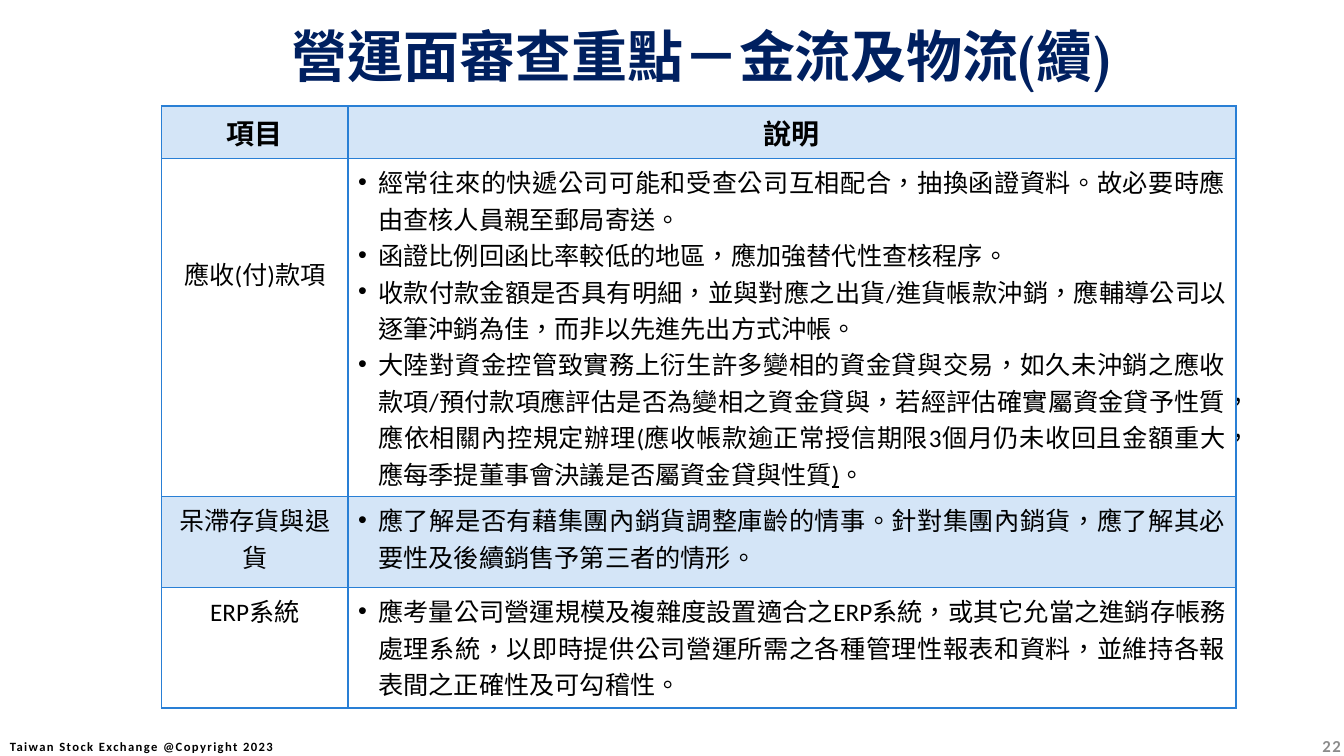
from lxml.etree import SubElement
from pptx import Presentation
from pptx.dml.color import RGBColor
from pptx.enum.lang import MSO_LANGUAGE_ID
from pptx.enum.text import MSO_ANCHOR, PP_ALIGN
from pptx.oxml.ns import qn
from pptx.util import Cm, Pt

COLORS = {"title": "002060", "text": "000000", "number": "8C8C8C",
          "border": "297FD5", "band": "D4E5F7"}
LATIN_FONT = "Calibri"
TITLE_FONT = "Vollkorn"
CHINESE_FONT = "Noto Sans CJK SC"

HEADINGS = ("項目", "說明")
REVIEW_ITEMS = [
    ("應收(付)款項", [
        ["經常往來的快遞公司可能和受查公司互相配合，抽換函證資料。故必要時應由查核人員親至郵局寄送。"],
        ["函證比例回函比率較低的地區，應加強替代性查核程序。"],
        ["收款付款金額是否具有明細，並與對應之出貨/進貨帳款沖銷，應輔導公司以逐筆沖銷為佳，而非以先進先出方式沖帳。"],
        ["大陸對資金控管致實務上衍生許多變相的資金貸與交易，如久未沖銷之應收款項/預付款項"
         "應評估是否為變相之資金貸與，若經評估確實屬資金貸予性質，應依相關內控規定辦理"
         "(應收帳款逾正常授信期限3個月仍未收回且金額重大，應每季提董事會決議是否屬資金貸與性質",
         ")", "。"],
    ]),
    ("呆滯存貨與退貨", [
        ["應了解是否有藉集團內銷貨調整庫齡的情事。針對集團內銷貨，應了解其必要性及後續銷售予第三者的情形。"],
    ]),
    ("ERP系統", [
        ["應考量公司營運規模及複雜度設置適合之ERP系統，或其它允當之進銷存帳務處理系統，"
         "以即時提供公司營運所需之各種管理性報表和資料，並維持各報表間之正確性及可勾稽性。"],
    ]),
]
COLUMN_WIDTHS = (Cm(4.7), Cm(22.38))
ROW_HEIGHTS = (Cm(1.32), Cm(8.52), Cm(2.29), Cm(3.04))
FIRST_LABEL_DROP = Cm(2.44)


def add_run(paragraph, text, size, color="text", bold=False, font_name=LATIN_FONT):
    run = paragraph.add_run()
    run.text = text
    font = run.font
    font.name = font_name
    font.size = Pt(size)
    font.bold = bold
    font.color.rgb = RGBColor.from_string(COLORS[color])
    font.language_id = MSO_LANGUAGE_ID.TRADITIONAL_CHINESE
    SubElement(run._r.get_or_add_rPr(), qn("a:ea"), typeface=CHINESE_FONT)
    return run


def add_text_line(slide, box, alignment):
    """Add a vertically centred text box and return its paragraph."""
    frame = slide.shapes.add_textbox(*box).text_frame
    frame.word_wrap = True
    frame.vertical_anchor = MSO_ANCHOR.MIDDLE
    paragraph = frame.paragraphs[0]
    paragraph.alignment = alignment
    return paragraph


def add_title(slide, box):
    paragraph = add_text_line(slide, box, PP_ALIGN.CENTER)
    for text, font_name in (("營運面審查重點", TITLE_FONT), ("－", CHINESE_FONT),
                            ("金流及物流(續)", TITLE_FONT)):
        add_run(paragraph, text, 40, "title", True, font_name)


def add_footer_text(slide, box, text, size, color, alignment):
    paragraph = add_text_line(slide, box, alignment)
    run = add_run(paragraph, text, size, color, True)
    run._r.get_or_add_rPr().set("spc", "100")


def style_cell(cell, banded):
    """Draw the four borders, then set the fill."""
    properties = cell._tc.get_or_add_tcPr()
    for side in ("lnL", "lnR", "lnT", "lnB"):
        line = SubElement(properties, qn(f"a:{side}"), w=str(Pt(1)))
        fill = SubElement(line, qn("a:solidFill"))
        SubElement(fill, qn("a:srgbClr"), val=COLORS["border"])
    if banded:
        cell.fill.solid()
        cell.fill.fore_color.rgb = RGBColor.from_string(COLORS["band"])
    else:
        cell.fill.background()


def write_label(cell, text, size, bold=False):
    paragraph = cell.text_frame.paragraphs[0]
    paragraph.alignment = PP_ALIGN.CENTER
    add_run(paragraph, text, size, bold=bold)


def write_bullets(cell, bullets):
    frame = cell.text_frame
    for index, texts in enumerate(bullets):
        paragraph = frame.add_paragraph() if index else frame.paragraphs[0]
        paragraph.alignment = PP_ALIGN.JUSTIFY
        properties = paragraph._p.get_or_add_pPr()
        properties.set("marL", str(Cm(0.51)))
        properties.set("indent", str(-Cm(0.51)))
        SubElement(properties, qn("a:buFont"), typeface="Arial")
        SubElement(properties, qn("a:buChar"), char="•")
        for text in texts:
            run = add_run(paragraph, text, 18)
            if text == ")":
                run.font.underline = True


def add_review_table(slide, left, top):
    table = slide.shapes.add_table(len(ROW_HEIGHTS), len(COLUMN_WIDTHS), left, top,
                                   sum(COLUMN_WIDTHS), sum(ROW_HEIGHTS)).table
    for column, width in zip(table.columns, COLUMN_WIDTHS):
        column.width = width
    for index, (row, height) in enumerate(zip(table.rows, ROW_HEIGHTS)):
        row.height = height
        for cell in row.cells:
            style_cell(cell, banded=index % 2 == 0)
    for column, heading in enumerate(HEADINGS):
        cell = table.cell(0, column)
        cell.vertical_anchor = MSO_ANCHOR.MIDDLE
        write_label(cell, heading, 20, bold=True)
    for row, (label, bullets) in enumerate(REVIEW_ITEMS, start=1):
        write_label(table.cell(row, 0), label, 18)
        write_bullets(table.cell(row, 1), bullets)
    table.cell(1, 0).margin_top = FIRST_LABEL_DROP


def main():
    presentation = Presentation()
    presentation.slide_width = Cm(33.87)
    presentation.slide_height = Cm(19.05)
    slide = presentation.slides.add_slide(presentation.slide_layouts[6])
    add_footer_text(slide, (Cm(-0.36), Cm(18.29), Cm(7.85), Cm(1.02)),
                    "Taiwan Stock Exchange @Copyright 2023", 9, "text", PP_ALIGN.CENTER)
    add_review_table(slide, Cm(4.07), Cm(2.67))
    add_footer_text(slide, (Cm(32.54), Cm(18.29), Cm(1.5), Cm(1.02)),
                    "22", 12, "number", PP_ALIGN.RIGHT)
    add_title(slide, (Cm(4.78), Cm(0.58), Cm(25.78), Cm(1.6)))
    presentation.save("out.pptx")


if __name__ == "__main__":
    main()
